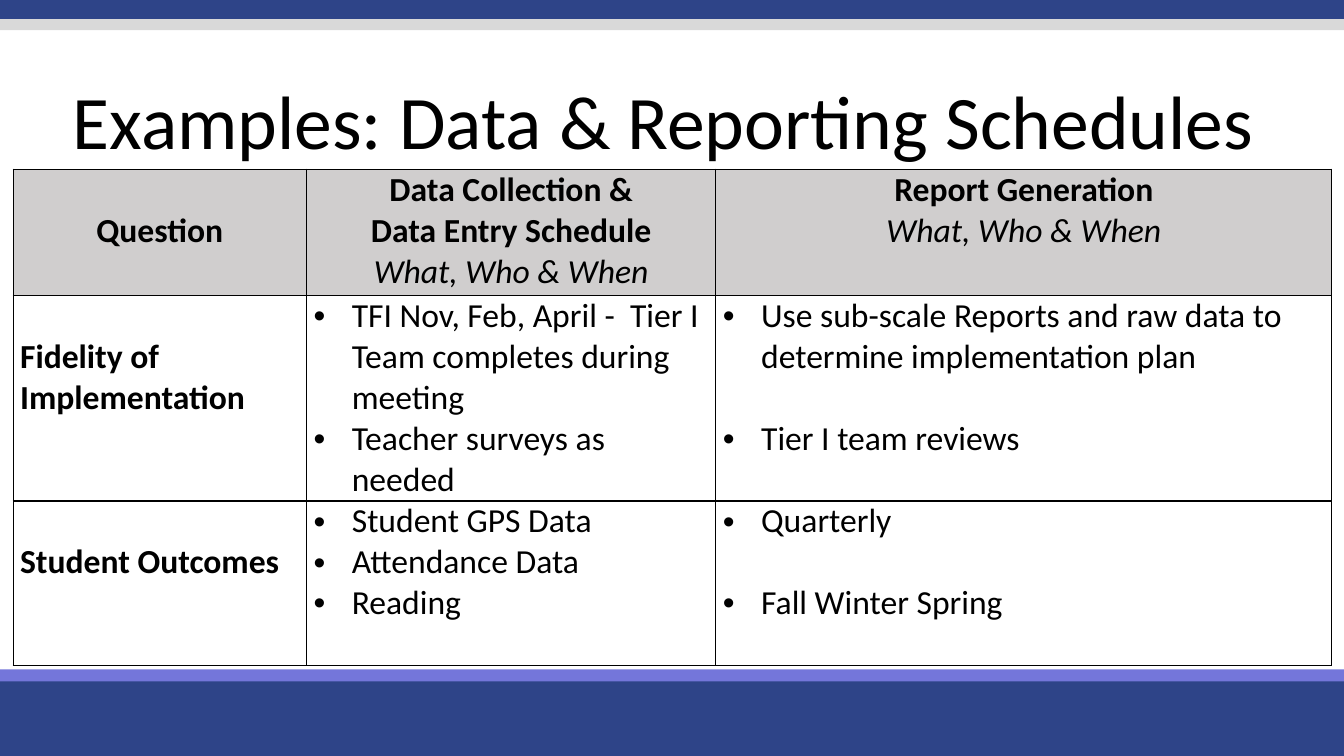
import pptx
import pptx.util
import pptx.dml.color
import pptx.enum.shapes
import pptx.enum.text
from dataclasses import dataclass
from lxml import etree
from pptx.oxml.ns import qn

In, Pt = pptx.util.Inches, pptx.util.Pt
Align, Anchor = pptx.enum.text.PP_ALIGN, pptx.enum.text.MSO_ANCHOR


@dataclass(frozen=True)
class Theme:
    font: str = "Calibri"
    ink: str = "000000"
    paper: str = "FFFFFF"
    head: str = "D0CECE"
    navy: str = "2E4488"
    lilac: str = "7476DA"
    gray: str = "D9D9D9"
    title: int = 54
    body: int = 24


T = Theme()
WIDE, HIGH = 13.33, 7.5
LINE = T.body * 1.22  # one line of table text, in points

TITLE = "Examples: Data & Reporting Schedules "
# Top, height, fill
BANDS = [(6.7, 0.8, T.navy), (6.64, 0.12, T.lilac),
         (-0.03, 0.22, T.navy), (0.19, 0.11, T.gray)]

COLS = [2.91, 4.06, 6.11]
ROWS = [1.25, 2.04, 1.63]
LEFT, TOP = 0.13, 1.68

# Each line: text, style
WHAT = ("What, Who & When", "italic")
HEADS = [
    [("Question", "bold")],
    [("Data Collection &", "bold"), ("Data Entry Schedule", "bold"), WHAT],
    [("Report Generation", "bold"), WHAT],
]
BODY = [
    [
        [("Fidelity of Implementation", "bold")],
        [("TFI Nov, Feb, April -  Tier I Team completes during meeting", "bullet"),
         ("Teacher surveys as needed", "bullet")],
        [("Use sub-scale Reports and raw data to determine implementation plan",
          "bullet"),
         ("Tier I team reviews", "spaced bullet")],
    ],
    [
        [("Student Outcomes", "bold")],
        [("Student GPS Data", "bullet"), ("Attendance Data", "bullet"),
         ("Reading", "bullet")],
        [("Quarterly", "bullet"), ("Fall Winter Spring", "spaced bullet")],
    ],
]


def tint(fill, color):
    fill.solid()
    fill.fore_color.rgb = pptx.dml.color.RGBColor.from_string(color)


def write(frame, lines, size=T.body, align=Align.LEFT, space=None):
    """Fill a text frame with (text, style) lines, one paragraph each."""
    for i, (text, style) in enumerate(lines):
        para = frame.paragraphs[0] if i == 0 else frame.add_paragraph()
        para.alignment = align
        if space:
            para.line_spacing = space
        if "spaced" in style:
            para.space_before = Pt(LINE)
        if "bullet" in style:
            props = para._p.get_or_add_pPr()
            props.set("marL", str(In(0.38)))
            props.set("indent", str(-In(0.38)))
            etree.SubElement(props, qn("a:buFont")).set("typeface", "Arial")
            etree.SubElement(props, qn("a:buChar")).set("char", "•")
        run = para.add_run()
        run.text = text
        font = run.font
        font.name, font.size = T.font, Pt(size)
        font.bold, font.italic = "bold" in style, "italic" in style
        tint(font.fill, T.ink)


def border(cell):
    props = cell._tc.get_or_add_tcPr()
    for i, side in enumerate(("lnL", "lnR", "lnT", "lnB")):
        line = etree.Element(qn("a:" + side), w=str(Pt(1)))
        fill = etree.SubElement(line, qn("a:solidFill"))
        etree.SubElement(fill, qn("a:srgbClr")).set("val", T.ink)
        props.insert(i, line)


def band(slide, top, high, color):
    shape = slide.shapes.add_shape(
        pptx.enum.shapes.MSO_SHAPE.RECTANGLE, 0, In(top), In(WIDE), In(high))
    shape.shadow.inherit = False
    tint(shape.fill, color)
    shape.line.fill.background()


def heading(slide):
    frame = slide.shapes.add_textbox(0, In(0.79), In(WIDE), In(0.75)).text_frame
    frame.word_wrap = True
    frame.vertical_anchor = Anchor.TOP
    frame.margin_top = In(0.05)
    write(frame, [(TITLE, "plain")], size=T.title, align=Align.CENTER, space=0.9)


def grid(slide):
    table = slide.shapes.add_table(
        len(ROWS), len(COLS), In(LEFT), In(TOP),
        In(sum(COLS)), In(sum(ROWS))).table
    table.horz_banding = False
    for col, wide in zip(table.columns, COLS):
        col.width = In(wide)
    for row, high in zip(table.rows, ROWS):
        row.height = In(high)
    for r, row in enumerate([HEADS] + BODY):
        for c, lines in enumerate(row):
            cell = table.cell(r, c)
            cell.margin_left = cell.margin_right = In(0.07)
            cell.margin_top = Pt(LINE) if c == 0 else 0
            cell.margin_bottom = 0
            cell.vertical_anchor = Anchor.TOP
            tint(cell.fill, T.paper if r else T.head)
            border(cell)
            write(cell.text_frame, lines,
                  align=Align.LEFT if r else Align.CENTER)


def main():
    deck = pptx.Presentation()
    deck.slide_width, deck.slide_height = In(WIDE), In(HIGH)
    slide = deck.slides.add_slide(deck.slide_layouts[6])
    tint(slide.background.fill, T.paper)
    for item in BANDS:
        band(slide, *item)
    heading(slide)
    grid(slide)
    deck.save("out.pptx")


if __name__ == "__main__":
    main()
